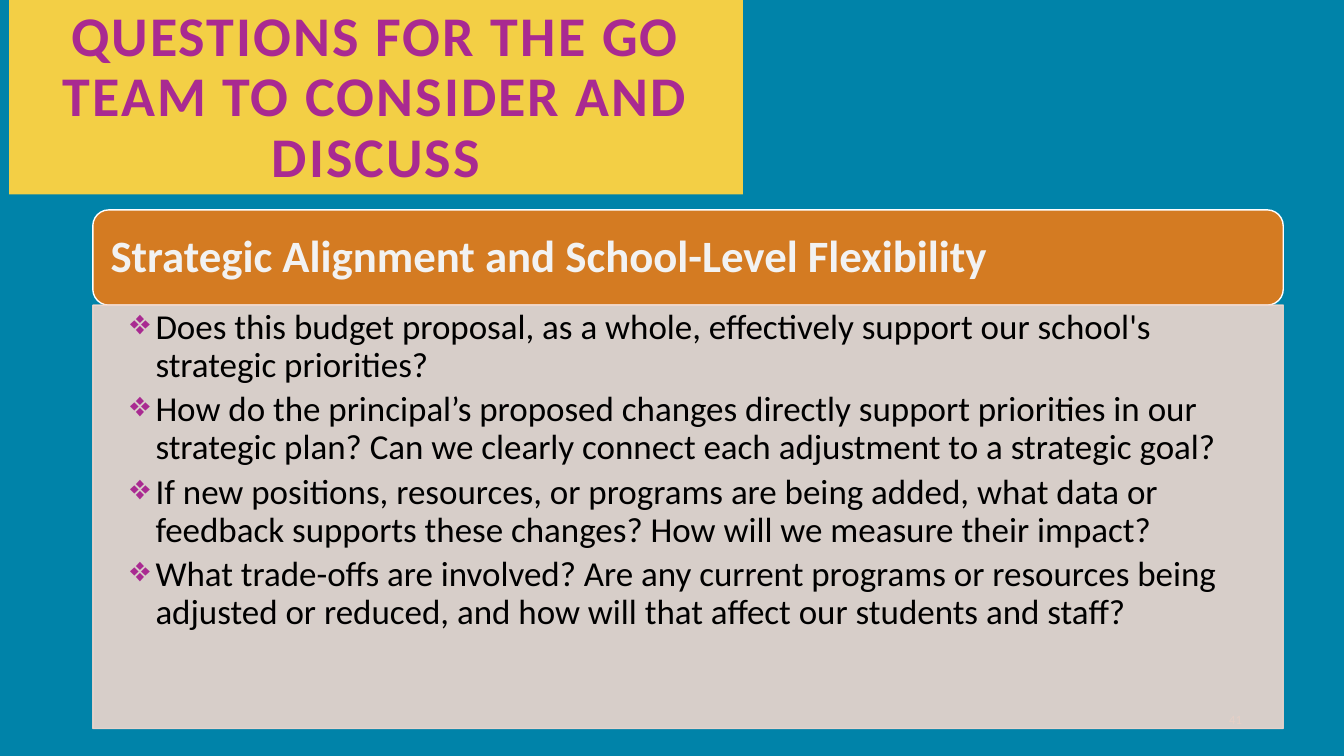
from lxml import etree
from pptx import Presentation
from pptx import util as u
from pptx.dml.color import RGBColor
from pptx.enum import shapes, text
from pptx.oxml.ns import qn

TEAL = RGBColor(0x00, 0x83, 0xA9)
YELLOW = RGBColor(0xF3, 0xCF, 0x45)
PURPLE = RGBColor(0xA9, 0x2A, 0x91)
ORANGE = RGBColor(0xD4, 0x7B, 0x22)
SAND = RGBColor(0xEF, 0xD7, 0xCD)
WHITE = RGBColor(0xFF, 0xFF, 0xFF)
OFF_WHITE = RGBColor(0xF2, 0xF2, 0xF2)
GREY = RGBColor(0x8C, 0x8C, 0x8C)
BLACK = RGBColor(0x00, 0x00, 0x00)

QUESTIONS = [
    "Does this budget proposal, as a whole, effectively support our school's strategic priorities?",
    "How do the principal’s proposed changes directly support priorities in our strategic plan? "
    "Can we clearly connect each adjustment to a strategic goal?",
    "If new positions, resources, or programs are being added, what data or feedback supports "
    "these changes? How will we measure their impact?",
    "What trade-offs are involved? Are any current programs or resources being adjusted or "
    "reduced, and how will that affect our students and staff?",
]


def add_block(s, kind, box, fill, line=None):
    """Add a filled shape in a box given in centimetres."""
    sp = s.shapes.add_shape(kind, *map(u.Cm, box))
    sp.shadow.inherit = False
    sp.fill.solid()
    sp.fill.fore_color.rgb = fill
    if line is None:
        sp.line.fill.background()
    else:
        sp.line.color.rgb = line
        sp.line.width = u.Pt(1)
    return sp


def write(sp, lines, size, color, bold=False, align=text.PP_ALIGN.LEFT,
          anchor=text.MSO_ANCHOR.MIDDLE, insets=(0.25, 0.13, 0.25, 0.13), after=0):
    """Write one formatted paragraph per line into a shape."""
    tf = sp.text_frame
    tf.word_wrap = True
    tf.vertical_anchor = anchor
    tf.margin_left, tf.margin_top, tf.margin_right, tf.margin_bottom = map(u.Cm, insets)
    tf.text = "\n".join(lines)
    for p in tf.paragraphs:
        p.alignment = align
        p.line_spacing = 0.9
        p.space_after = u.Pt(after)
        for r in p.runs:
            r.font.name = "Calibri"
            r.font.size = u.Pt(size)
            r.font.bold = bold
            r.font.color.rgb = color
    return tf


def set_alpha(fill_parent, percent):
    """Make the solid fill under an element partly transparent."""
    clr = fill_parent.find(qn("a:solidFill"))[0]
    etree.SubElement(clr, qn("a:alpha"), val=str(percent * 1000))


def add_bullet(p, char, color, indent):
    """Give a paragraph a coloured bullet with a hanging indent."""
    pPr = p._p.get_or_add_pPr()
    pPr.set("marL", str(u.Cm(indent)))
    pPr.set("indent", str(-u.Cm(indent)))
    clr = etree.SubElement(pPr, qn("a:buClr"))
    etree.SubElement(clr, qn("a:srgbClr"), val=str(color))
    etree.SubElement(pPr, qn("a:buChar"), char=char)


def add_page_number(s, box, number):
    """Place the page number at the right of its box."""
    sp = s.shapes.add_textbox(*map(u.Cm, box))
    write(sp, [number], 9, GREY, align=text.PP_ALIGN.RIGHT)


def add_title(s, box, title):
    """Place the title banner."""
    sp = add_block(s, shapes.MSO_SHAPE.RECTANGLE, box, YELLOW)
    tf = write(sp, [title], 40, PURPLE, True, text.PP_ALIGN.CENTER, text.MSO_ANCHOR.BOTTOM)
    tf.paragraphs[0].runs[0].font._element.set("spc", "150")


def add_questions(s, box, heading, questions):
    """Place a rounded heading bar above a panel of bulleted questions."""
    left, top, width, height = box
    bar = 2.4
    sp = add_block(s, shapes.MSO_SHAPE.ROUNDED_RECTANGLE, (left, top, width, bar), ORANGE, WHITE)
    write(sp, [heading], 32, OFF_WHITE, True, insets=(0.33,) * 4)

    sp = add_block(s, shapes.MSO_SHAPE.RECTANGLE, (left, top + bar, width, height - bar), SAND, SAND)
    spPr = sp._element.spPr
    set_alpha(spPr, 90)
    set_alpha(spPr.find(qn("a:ln")), 90)
    tf = write(sp, questions, 25, BLACK, anchor=text.MSO_ANCHOR.TOP,
               insets=(0.94, 0.1, 0.64, 0.1), after=5)
    for p in tf.paragraphs:
        add_bullet(p, "❖", PURPLE, 0.64)


def main():
    """Build the slide and save it."""
    prs = Presentation()
    prs.slide_width, prs.slide_height = u.Cm(33.87), u.Cm(19.05)
    s = prs.slides.add_slide(prs.slide_layouts[6])
    s.background.fill.solid()
    s.background.fill.fore_color.rgb = TEAL
    add_page_number(s, (23.93, 17.65, 7.62, 1.02), "41")
    add_title(s, (0.23, 0, 18.49, 4.9), "QUESTIONS FOR THE GO TEAM TO CONSIDER AND DISCUSS")
    add_questions(s, (2.34, 5.29, 30, 13.07),
                  "Strategic Alignment and School-Level Flexibility", QUESTIONS)
    prs.save("out.pptx")


if __name__ == "__main__":
    main()
